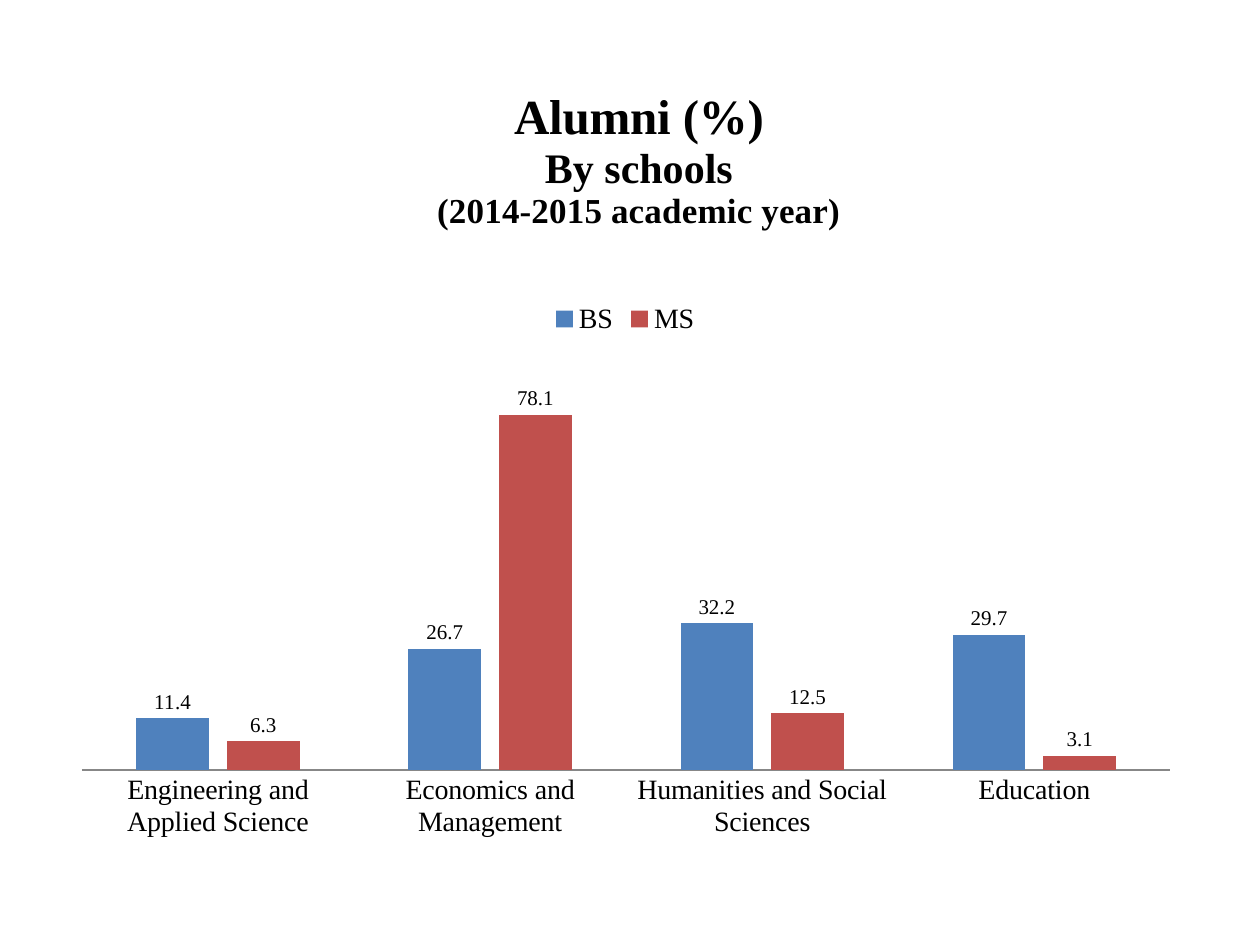
from dataclasses import dataclass

from lxml import etree
from pptx import Presentation
from pptx.chart.data import CategoryChartData
from pptx.dml.color import RGBColor
from pptx.enum.chart import XL_CHART_TYPE, XL_LABEL_POSITION, XL_LEGEND_POSITION, XL_TICK_MARK
from pptx.enum.text import PP_ALIGN
from pptx.oxml.ns import qn
from pptx.util import Inches, Pt

COLUMNS = XL_CHART_TYPE.COLUMN_CLUSTERED
OUTSIDE_END = XL_LABEL_POSITION.OUTSIDE_END
LEGEND_TOP = XL_LEGEND_POSITION.TOP
NO_TICK = XL_TICK_MARK.NONE
CENTER = PP_ALIGN.CENTER


@dataclass(frozen=True)
class Theme:
    font: str = "Times New Roman"
    text: RGBColor = RGBColor(0x00, 0x00, 0x00)
    axis: RGBColor = RGBColor(0x87, 0x87, 0x87)
    axis_size: int = 16
    label_size: int = 12


@dataclass(frozen=True)
class SchoolSeries:
    name: str
    values: tuple[float, ...]
    color: RGBColor


@dataclass(frozen=True)
class TitleLine:
    text: str
    size: int


THEME = Theme()
SCHOOLS = (
    "Engineering and Applied Science",
    "Economics and Management",
    "Humanities and Social Sciences",
    "Education",
)
DEGREES = (
    SchoolSeries("BS", (11.4, 26.7, 32.2, 29.7), RGBColor(0x4F, 0x81, 0xBD)),
    SchoolSeries("MS", (6.3, 78.1, 12.5, 3.1), RGBColor(0xC0, 0x50, 0x4D)),
)
TITLE = (
    TitleLine("Alumni (%)", 28),
    TitleLine("By schools", 24),
    TitleLine("(2014-2015 academic year)", 20),
)


def style_font(font, size: int, bold: bool = False) -> None:
    formats = {"name": THEME.font, "size": Pt(size), "bold": bold}
    for attribute, value in formats.items():
        setattr(font, attribute, value)
    font.color.rgb = THEME.text


def place(parent, index: int, values: dict[str, str | float]) -> None:
    """Give a chart part a manual layout, in fractions of the chart."""
    for old_layout in parent.findall(qn("c:layout")):
        parent.remove(old_layout)
    layout = etree.Element(qn("c:layout"))
    manual = etree.SubElement(layout, qn("c:manualLayout"))
    for tag, value in values.items():
        etree.SubElement(manual, qn(f"c:{tag}")).set("val", str(value))
    parent.insert(index, layout)


def add_title(chart) -> None:
    chart.has_title = True
    title = chart.chart_title
    title.include_in_layout = False
    frame = title.text_frame
    for number, line in enumerate(TITLE):
        para = frame.paragraphs[0] if number == 0 else frame.add_paragraph()
        para.alignment = CENTER
        style_font(para.font, line.size, bold=True)
        span = para.add_run()
        span.text = line.text
        style_font(span.font, line.size, bold=True)
    place(title._element, 1, {"xMode": "edge", "yMode": "edge", "x": 0.33, "y": 0.02})


def add_legend(chart) -> None:
    chart.has_legend = True
    legend = chart.legend
    legend.position = LEGEND_TOP
    legend.include_in_layout = False
    style_font(legend.font, THEME.axis_size)
    place(legend._element, 1, {"xMode": "edge", "yMode": "edge", "x": 0.43, "y": 0.29})


def style_axes(chart) -> None:
    schools = chart.category_axis
    schools.major_tick_mark = NO_TICK
    schools.format.line.color.rgb = THEME.axis
    schools.format.line.width = Pt(0.75)
    style_font(schools.tick_labels.font, THEME.axis_size)
    percent = chart.value_axis
    formats = {
        "visible": False,
        "has_major_gridlines": False,
        "minimum_scale": 0,
        "maximum_scale": 90,
    }
    for attribute, value in formats.items():
        setattr(percent, attribute, value)


def style_columns(plot) -> None:
    formats = {"gap_width": 150, "overlap": -25, "vary_by_categories": False}
    for attribute, value in formats.items():
        setattr(plot, attribute, value)
    for series, degree in zip(plot.series, DEGREES):
        series.invert_if_negative = False
        series.format.fill.solid()
        series.format.fill.fore_color.rgb = degree.color
        labels = series.data_labels
        labels.show_value = True
        labels.position = OUTSIDE_END
        style_font(labels.font, THEME.label_size)


def add_alumni_chart(page) -> None:
    data = CategoryChartData(number_format="General")
    data.categories = SCHOOLS
    for degree in DEGREES:
        data.add_series(degree.name, degree.values)
    frame = page.shapes.add_chart(
        COLUMNS, Inches(0.47), Inches(0.55), Inches(9), Inches(6.25), data
    )
    chart = frame.chart
    add_title(chart)
    add_legend(chart)
    style_axes(chart)
    style_columns(chart.plots[0])
    plot_area = chart._chartSpace.find(f"{qn('c:chart')}/{qn('c:plotArea')}")
    place(plot_area, 0, {
        "layoutTarget": "inner", "xMode": "edge", "yMode": "edge",
        "x": 0.02, "y": 0.37, "w": 0.96, "h": 0.52,
    })


def main() -> None:
    deck = Presentation()
    deck.slide_width, deck.slide_height = Inches(10), Inches(7.5)
    page = deck.slides.add_slide(deck.slide_layouts[6])
    add_alumni_chart(page)
    deck.save("out.pptx")


if __name__ == "__main__":
    main()
